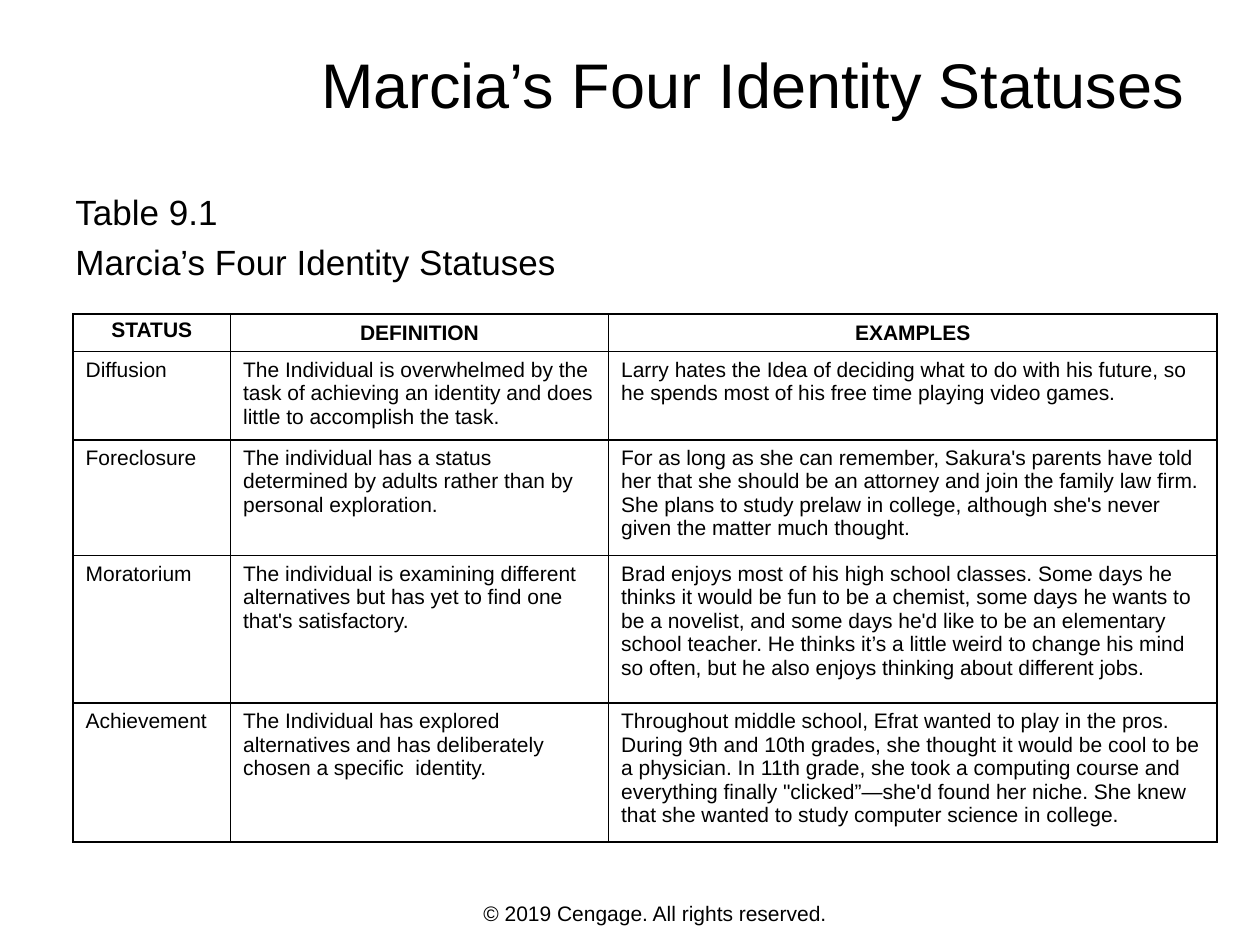
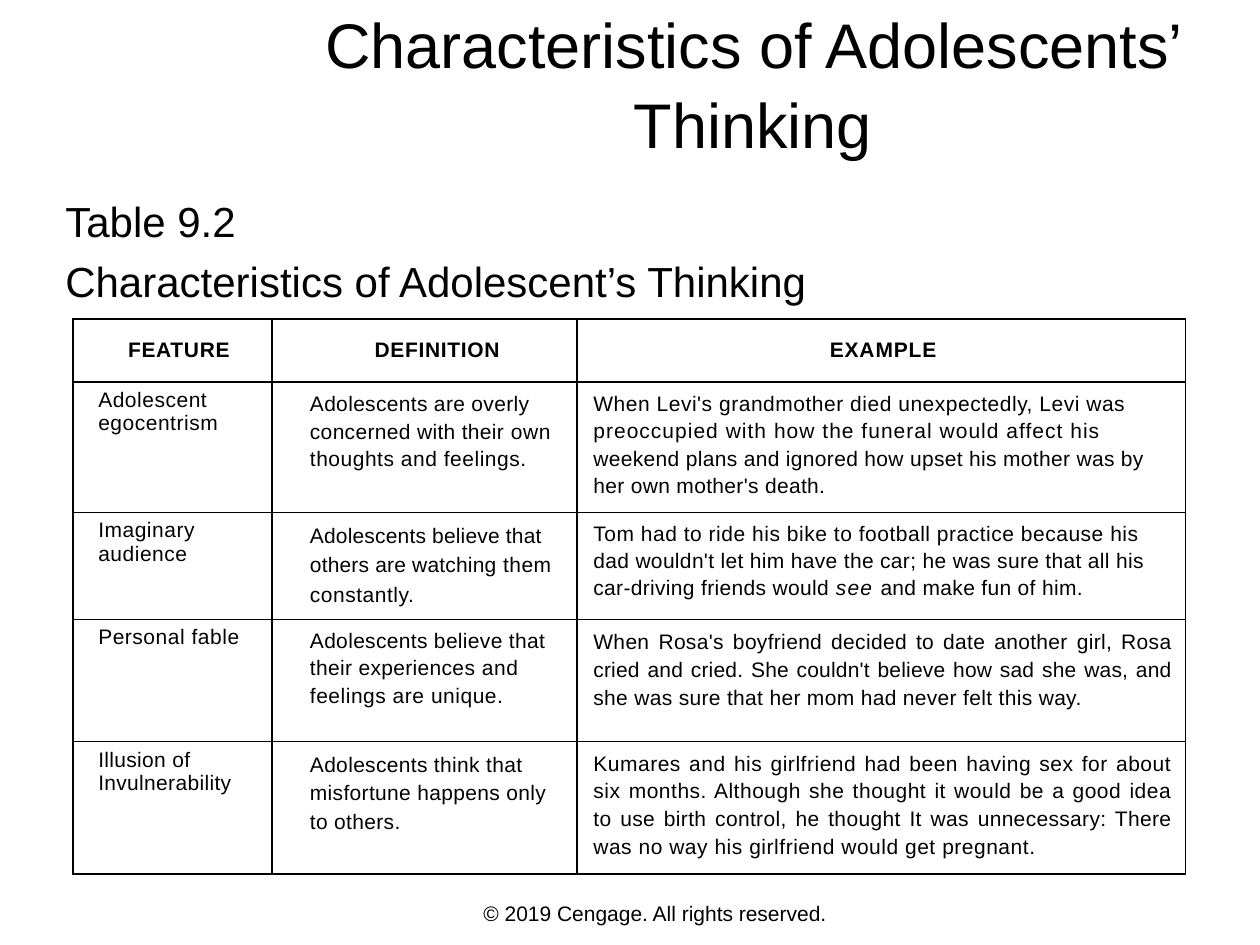
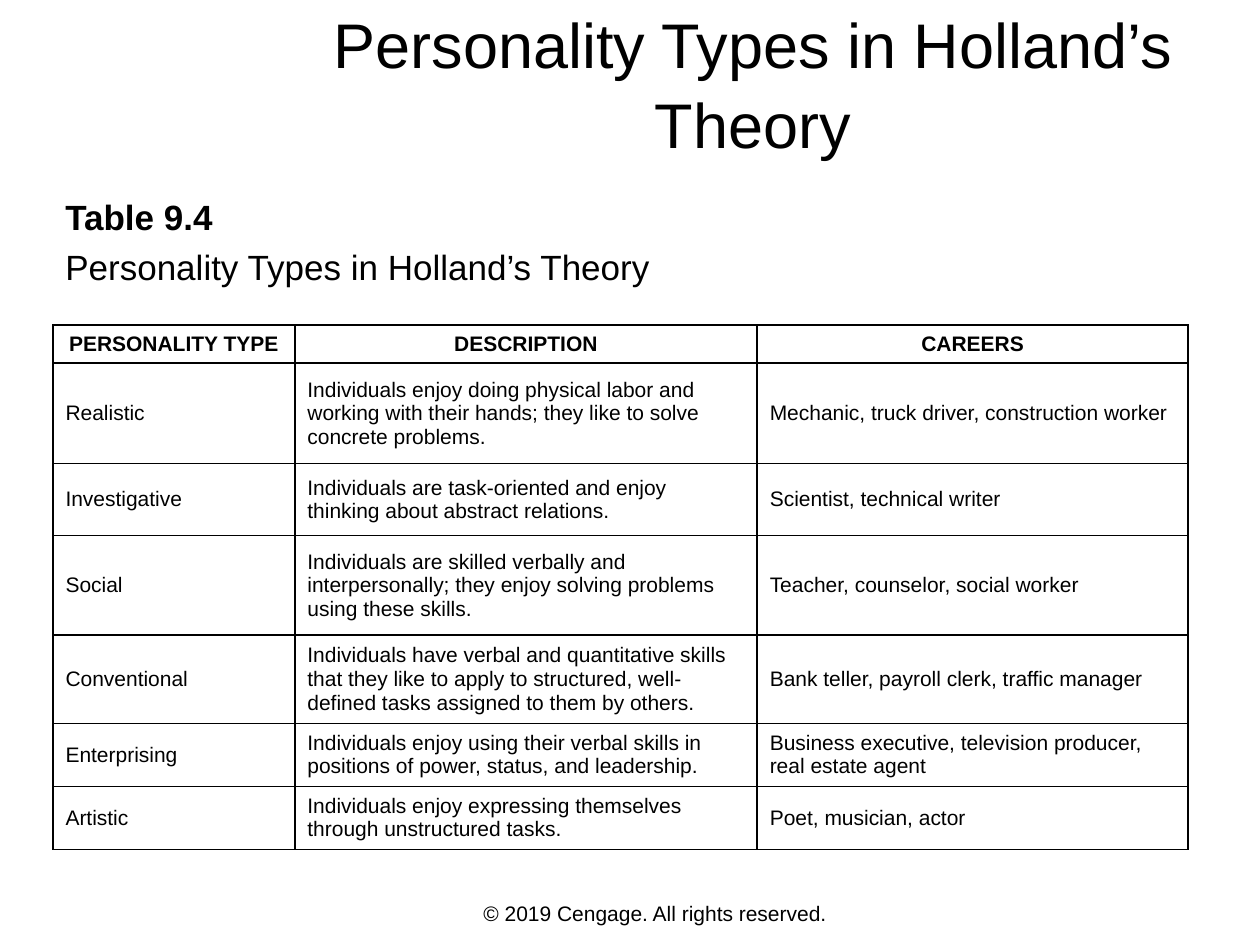
from lxml import etree
from pptx import Presentation
from pptx import util as u
from pptx.dml.color import RGBColor
from pptx.enum import text
from pptx.oxml.ns import qn

COLORS = {"ink": "000000", "paper": "FFFFFF"}
FONT = "Arial"
LEFT, CENTER, JUSTIFY = text.PP_ALIGN.LEFT, text.PP_ALIGN.CENTER, text.PP_ALIGN.JUSTIFY
TOP, MIDDLE = text.MSO_ANCHOR.TOP, text.MSO_ANCHOR.MIDDLE


def add_run(paragraph, words, size, bold=False, italic=False, tracking=0):
    run = paragraph.add_run()
    run.text = words
    run.font.name = FONT
    run.font.size = u.Pt(size)
    run.font.bold = bold
    run.font.italic = italic
    run.font.color.rgb = RGBColor.from_string(COLORS["ink"])
    if tracking:
        run.font._element.set("spc", str(round(tracking * 100)))


def add_lines(slide, box, lines, size, align, anchor=TOP, bold_first=False, spacing=None):
    frame = slide.shapes.add_textbox(*[u.Inches(n) for n in box]).text_frame
    frame.word_wrap = True
    frame.vertical_anchor = anchor
    for index, line in enumerate(lines):
        paragraph = frame.paragraphs[0] if index == 0 else frame.add_paragraph()
        paragraph.alignment = align
        paragraph.line_spacing = spacing
        if index:
            paragraph.space_before = u.Pt(size * 0.23)
        add_run(paragraph, line, size, bold=bold_first and index == 0)


statuses = {
    "title": "Marcia’s Four Identity Statuses",
    "caption": ["Table 9.1", "Marcia’s Four Identity Statuses"],
    "caption_box": (0.5, 1.46, 9.33, 0.83),
    "caption_size": 20,
    "corner": (0.58, 2.49),
    "columns": [1.25, 3, 4.83],
    "rows": [0.29, 0.66, 0.92, 1.17, 1.03],
    "header_spacing": [u.Pt(10.6), None, None],
    "cells": [
        ["STATUS", "DEFINITION", "EXAMPLES"],
        ["Diffusion",
         "The Individual is overwhelmed by the task of achieving an identity and does little to accomplish the task.",
         "Larry hates the Idea of deciding what to do with his future, so he spends most of his free time playing video games."],
        ["Foreclosure",
         "The individual has a status determined by adults rather than by personal exploration.",
         "For as long as she can remember, Sakura's parents have told her that she should be an attorney and join the "
         "family law firm. She plans to study prelaw in college, although she's never given the matter much thought."],
        ["Moratorium",
         "The individual is examining different alternatives but has yet to find one that's satisfactory.",
         "Brad enjoys most of his high school classes. Some days he thinks it would be fun to be a chemist, some days he "
         "wants to be a novelist, and some days he'd like to be an elementary school teacher. He thinks it’s a little "
         "weird to change his mind so often, but he also enjoys thinking about different jobs."],
        ["Achievement",
         "The Individual has explored alternatives and has deliberately chosen a specific  identity.",
         "Throughout middle school, Efrat wanted to play in the pros. During 9th and 10th grades, she thought it would be "
         "cool to be a physician. In 11th grade, she took a computing course and everything finally \"clicked”—she'd "
         "found her niche. She knew that she wanted to study computer science in college."],
    ],
}

thinking = {
    "title": "Characteristics of Adolescents’ Thinking",
    "caption": ["Table 9.2", "Characteristics of Adolescent’s Thinking"],
    "caption_box": (0.42, 1.5, 9.33, 0.92),
    "caption_size": 24,
    "corner": (0.58, 2.53),
    "columns": [1.58, 2.42, 4.83],
    "rows": [0.5, 0.98, 0.8, 0.97, 1.05],
    "indents": [0.1, 0.2, 0.03],
    "spacing": [[None, 1.18, 1.17], [None, 1.25, 1.15], [None, 1.16, 1.2], [None, 1.22, 1.18]],
    "justified": [(3, 2), (4, 2)],
    "cells": [
        [[("FEATURE", 0.4)], [("DEFINITION", 0.4)], [("EXAMPLE", 0.5)]],
        [[("Adolescent egocentrism", 0.3)],
         [("Adolescents are overly concerned with their ", 0.2), ("own thoughts and feelings.", 0.3)],
         [("When Levi's grandmother died unexpectedly, Levi was ", 0.3),
          ("preoccupied with how the funeral would affect his ", 0.6),
          ("weekend plans and ignored how upset his mother was by her own mother's death.", 0.2)]],
        [[("Imaginary audience", 0.3)],
         [("Adolescents believe that others are watching ", 0.1), ("them constantly.", 0.3)],
         [("Tom had to ride his bike to football practice because his ", 0.3),
          ("dad wouldn't let him have the car; he was sure that all his car-driving friends would ", 0.2),
          ("see ", 0.7, True), ("and make fun of him.", 0.2)]],
        [[("Personal fable", 0.3)],
         [("Adolescents believe that their experiences ", 0.2), ("and feelings are unique.", 0.3)],
         [("When Rosa's boyfriend decided to date another girl, Rosa ", 0.2),
          ("cried and cried. She couldn't believe how sad she was, and ", 0.1),
          ("she was sure that her mom had never felt this way.", 0.2)]],
        [[("Illusion of Invulnerability", 0.2)],
         [("Adolescents think that misfortune happens only to others.", 0.2)],
         [("Kumares and his girlfriend had been having sex for about six months. Although she thought it would be a good idea ", 0.3),
          ("to use birth control, he thought It was unnecessary: There ", 0.2),
          ("was no way his girlfriend would get pregnant.", 0.3)]],
    ],
}

personalities = {
    "title": "Personality Types in Holland’s Theory",
    "caption": ["Table 9.4", "Personality Types in Holland’s Theory"],
    "caption_box": (0.42, 1.5, 9.33, 0.91),
    "caption_size": 20,
    "caption_bold": True,
    "corner": (0.42, 2.58),
    "columns": [1.92, 3.67, 3.42],
    "rows": [0.29, 0.8, 0.57, 0.79, 0.66, 0.47, 0.47],
    "anchor": MIDDLE,
    "cells": [
        ["PERSONALITY TYPE", "DESCRIPTION", "CAREERS"],
        ["Realistic",
         "Individuals enjoy doing physical labor and working with their hands; they like to solve concrete problems.",
         "Mechanic, truck driver, construction worker"],
        ["Investigative",
         "Individuals are task-oriented and enjoy thinking about abstract relations.",
         "Scientist, technical writer"],
        ["Social",
         "Individuals are skilled verbally and interpersonally; they enjoy solving problems using these skills.",
         "Teacher, counselor, social worker"],
        ["Conventional",
         "Individuals have verbal and quantitative skills that they like to apply to structured, well-defined tasks "
         "assigned to them by others.",
         "Bank teller, payroll clerk, traffic manager"],
        ["Enterprising",
         "Individuals enjoy using their verbal skills in positions of power, status, and leadership.",
         "Business executive, television producer, real estate agent"],
        ["Artistic",
         "Individuals enjoy expressing themselves through unstructured tasks.",
         "Poet, musician, actor"],
    ],
}

deck = Presentation()
deck.slide_width, deck.slide_height = u.Inches(10), u.Inches(7.5)

for topic in (statuses, thinking, personalities):
    slide = deck.slides.add_slide(deck.slide_layouts[6])
    slide.background.fill.solid()
    slide.background.fill.fore_color.rgb = RGBColor.from_string(COLORS["paper"])
    add_lines(slide, (1.65, 7.1, 7.1, 0.3), ["© 2019 Cengage. All rights reserved."], 12, CENTER)
    add_lines(slide, (2.03, 0.07, 7.89, 1.15), [topic["title"]], 36, CENTER, MIDDLE, spacing=1.05)
    add_lines(slide, topic["caption_box"], topic["caption"], topic["caption_size"], LEFT,
              bold_first=topic.get("caption_bold", False))

    widths, heights = topic["columns"], topic["rows"]
    extent = [u.Inches(n) for n in (*topic["corner"], sum(widths), sum(heights))]
    table = slide.shapes.add_table(len(heights), len(widths), *extent).table
    table.horz_banding = False
    for column, width in zip(table.columns, widths):
        column.width = u.Inches(width)
    for row, height in zip(table.rows, heights):
        row.height = u.Inches(height)

    indents = topic.get("indents", [0] * len(widths))
    spacing = [topic.get("header_spacing", [None] * len(widths))]
    spacing += topic.get("spacing", [[None] * len(widths)] * (len(heights) - 1))
    for r, entries in enumerate(topic["cells"]):
        for c, entry in enumerate(entries):
            header = r == 0
            cell = table.cell(r, c)
            cell.vertical_anchor = MIDDLE if header else topic.get("anchor", TOP)
            properties = cell._tc.get_or_add_tcPr()
            for side in ("a:lnL", "a:lnR", "a:lnT", "a:lnB"):
                edge = etree.SubElement(properties, qn(side), w=str(u.Pt(1)))
                ink = etree.SubElement(edge, qn("a:solidFill"))
                etree.SubElement(ink, qn("a:srgbClr"), val=COLORS["ink"])
            cell.fill.background()

            paragraph = cell.text_frame.paragraphs[0]
            body_align = JUSTIFY if (r, c) in topic.get("justified", []) else LEFT
            paragraph.alignment = CENTER if header else body_align
            paragraph.line_spacing = spacing[r][c]
            if indents[c]:
                paragraph._p.get_or_add_pPr().set("marL", str(u.Inches(indents[c])))
            for words, tracking, *italic in [(entry, 0)] if isinstance(entry, str) else entry:
                add_run(paragraph, words, 12, header, bool(italic), tracking)

deck.save("out.pptx")
